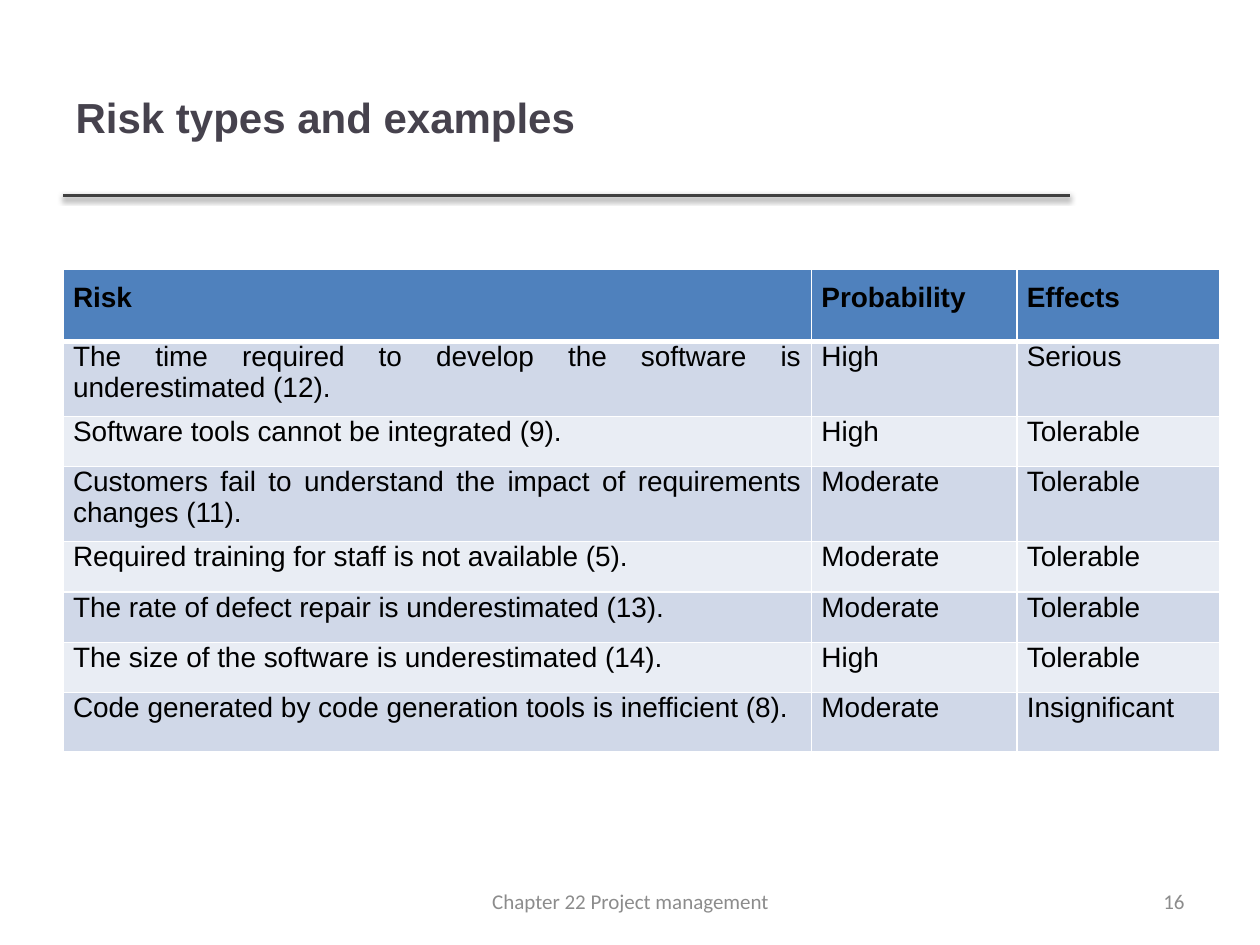
from lxml import etree
from pptx import Presentation
from pptx import util as u
from pptx.dml.color import RGBColor
from pptx.enum import shapes, text
from pptx.oxml import parse_xml
from pptx.oxml.ns import qn

INK = {"title": "46424D", "rule": "404040", "foot": "8C8C8C", "text": "000000",
       "head": "4F81BD", "odd": "D0D8E8", "even": "E9EDF4", "edge": "FFFFFF"}
NS = 'xmlns:a="http://schemas.openxmlformats.org/drawingml/2006/main"'
ALIGN, ANCHOR = text.PP_ALIGN, text.MSO_ANCHOR

WIDTHS = [5.94, 1.63, 1.61]
HEIGHTS = [0.57, 0.47, 0.4, 0.47, 0.4, 0.4, 0.4, 0.47]
RISKS = [
    ("Risk", "Probability", "Effects"),
    ("The time required to develop the software is underestimated (12).", "High", "Serious"),
    ("Software tools cannot be integrated (9).", "High", "Tolerable"),
    ("Customers fail to understand the impact of requirements changes (11).",
     "Moderate", "Tolerable"),
    ("Required training for staff is not available (5).", "Moderate", "Tolerable"),
    ("The rate of defect repair is underestimated (13).", "Moderate", "Tolerable"),
    ("The size of the software is underestimated (14).", "High", "Tolerable"),
    ("Code generated by code generation tools is inefficient (8).", "Moderate", "Insignificant"),
]


def put(obj, vals):
    for key, val in vals.items():
        setattr(obj, key, val)


def box(left, top, width, height):
    names = ("left", "top", "width", "height")
    return dict(zip(names, map(u.Inches, (left, top, width, height))))


def write(frame, words, ink, align, **font):
    frame.text = words
    para = frame.paragraphs[0]
    para.alignment = align
    run = para.runs[0].font
    put(run, font)
    run.color.rgb = RGBColor.from_string(INK[ink])


def add_title(slide, words):
    title = slide.shapes.title
    put(title, box(0.5, 0.3, 7.98, 1.25))
    put(title.text_frame, {"vertical_anchor": ANCHOR.MIDDLE, "word_wrap": True})
    write(title.text_frame, words, "title", ALIGN.LEFT,
          size=u.Pt(24), name="Arial", bold=True)


def add_rule(slide):
    y = u.Inches(1.55)
    rule = slide.shapes.add_connector(
        shapes.MSO_CONNECTOR.STRAIGHT, u.Inches(0.5), y, u.Inches(8.49), y)
    rule.line.width = u.Pt(2)
    rule.line.color.rgb = RGBColor.from_string(INK["rule"])
    # Soft shadow straight below the rule
    rule._element.spPr.append(parse_xml(
        f'<a:effectLst {NS}><a:outerShdw blurRad="{u.Pt(3.1)}" dist="{u.Pt(1.6)}" '
        'dir="5400000" rotWithShape="0"><a:srgbClr val="000000">'
        '<a:alpha val="38000"/></a:srgbClr></a:outerShdw></a:effectLst>'))


def add_edges(cell, base):
    props = cell._tc.get_or_add_tcPr()
    for spot, side in enumerate("LRTB"):
        line = etree.Element(qn(f"a:ln{side}"), w=str(u.Pt(base if side == "B" else 1)))
        fill = etree.SubElement(line, qn("a:solidFill"))
        etree.SubElement(fill, qn("a:srgbClr"), val=INK["edge"])
        props.insert(spot, line)


def add_cell(cell, words, row):
    head = row == 0
    put(cell, {"margin_left": u.Inches(0.08), "margin_right": u.Inches(0.08),
               "margin_top": u.Inches(0.1 if head else 0), "margin_bottom": u.Inches(0.1)})
    write(cell.text_frame, words, "text", ALIGN.JUSTIFY,
          size=u.Pt(16), name="Arial", bold=head)
    cell.fill.solid()
    tone = "head" if head else "odd" if row % 2 else "even"
    cell.fill.fore_color.rgb = RGBColor.from_string(INK[tone])
    add_edges(cell, 3 if head else 1)


def add_risks(slide):
    place = box(0.5, 2.14, sum(WIDTHS), sum(HEIGHTS))
    grid = slide.shapes.add_table(len(RISKS), len(WIDTHS), **place).table
    for col, width in zip(grid.columns, WIDTHS):
        col.width = u.Inches(width)
    for row, height in zip(grid.rows, HEIGHTS):
        row.height = u.Inches(height)
    for i, risk in enumerate(RISKS):
        for j, words in enumerate(risk):
            add_cell(grid.cell(i, j), words, i)


def add_foot(slide, words, left, width, align):
    frame = slide.shapes.add_textbox(**box(left, 6.95, width, 0.4)).text_frame
    put(frame, {"word_wrap": True, "vertical_anchor": ANCHOR.MIDDLE})
    write(frame, words, "foot", align, size=u.Pt(12), name="Calibri")


def main():
    deck = Presentation()
    put(deck, {"slide_width": u.Inches(10), "slide_height": u.Inches(7.5)})
    slide = deck.slides.add_slide(deck.slide_layouts[5])
    # Heading
    add_rule(slide)
    add_title(slide, "Risk types and examples")
    # Body
    add_risks(slide)
    # Footer
    add_foot(slide, "16", 7.17, 2.33, ALIGN.RIGHT)
    add_foot(slide, "Chapter 22 Project management", 3.42, 3.17, ALIGN.CENTER)
    deck.save("out.pptx")


if __name__ == "__main__":
    main()
